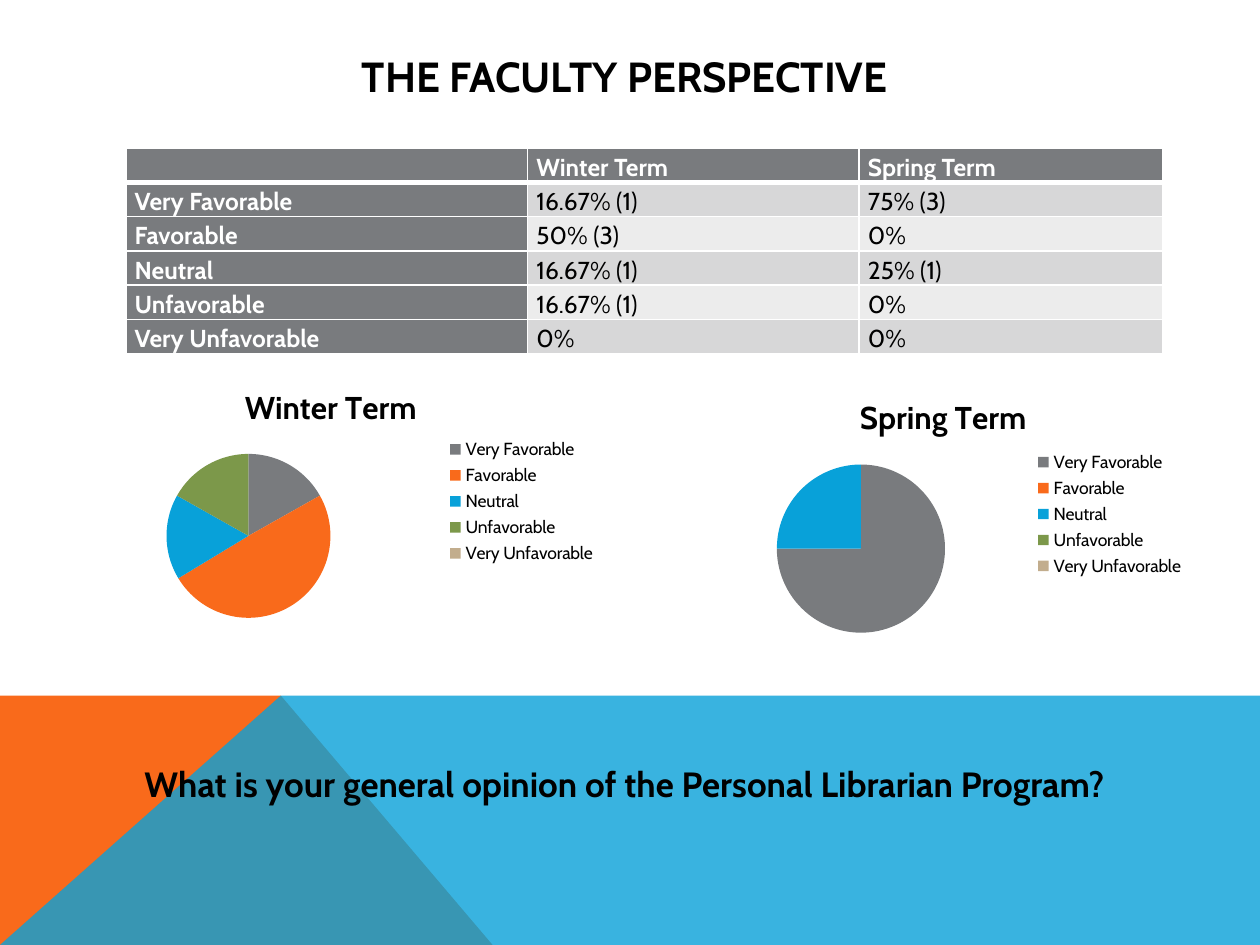
from lxml import etree
from pptx import Presentation
from pptx.chart.data import CategoryChartData
from pptx.dml.color import RGBColor
from pptx.enum import chart as ch, text as tx
from pptx.oxml.ns import qn
from pptx.util import Pt

FONT = "Cabin"
BLACK = RGBColor(0, 0, 0)
WHITE = RGBColor(255, 255, 255)
GRAY = RGBColor(0x79, 0x7B, 0x7E)
ORANGE = RGBColor(0xF9, 0x6A, 0x1B)
BLUE = RGBColor(0x08, 0xA1, 0xD9)
GREEN = RGBColor(0x7C, 0x98, 0x4A)
TAN = RGBColor(0xC2, 0xAD, 0x8D)
DARK = RGBColor(0xD7, 0xD7, 0xD8)
LIGHT = RGBColor(0xEC, 0xEC, 0xEC)


def style(font, size, color=BLACK, bold=False):
    font.name, font.size, font.bold = FONT, Pt(size), bold
    font.color.rgb = color


def edge(cell, side, width):
    """Draw a white border on one side (L, R, T or B) of a cell."""
    line = etree.SubElement(cell._tc.get_or_add_tcPr(), qn("a:ln" + side), w=str(Pt(width)))
    fill = etree.SubElement(line, qn("a:solidFill"))
    etree.SubElement(fill, qn("a:srgbClr"), val=str(WHITE))


prs = Presentation()
prs.slide_width, prs.slide_height = Pt(720), Pt(540)
slide = prs.slides.add_slide(prs.slide_layouts[5])

# Bottom band: orange triangle under a translucent blue sheet
TOP, PEAK = 397.5, 160.5
bands = [
    (ORANGE, [(0, 540), (0, TOP), (PEAK, TOP), (281.5, 540)]),
    (BLUE, [(0, 540), (PEAK, TOP), (720, TOP), (720, 540)]),
]
for color, dots in bands:
    dots = [(Pt(x), Pt(y)) for x, y in dots]
    path = slide.shapes.build_freeform(*dots[0])
    path.add_line_segments(dots[1:], close=True)
    band = path.convert_to_shape()
    band.shadow.inherit = False
    band.fill.solid()
    band.fill.fore_color.rgb = color
    band.line.fill.background()
tint = band.fill._xPr.find(".//" + qn("a:srgbClr"))
etree.SubElement(tint, qn("a:alpha"), val="80000")

# Title and question
title = slide.shapes.title
title.left, title.top, title.width, title.height = Pt(30), Pt(25), Pt(654), Pt(36)
ask = slide.shapes.add_textbox(Pt(42), Pt(432), Pt(630), Pt(31.5))
for box, words, size in [
    (title, "THE FACULTY PERSPECTIVE", 24),
    (ask, "What is your general opinion of the Personal Librarian Program?", 20),
]:
    frame = box.text_frame
    frame.text = words
    frame.word_wrap = True
    frame.auto_size = tx.MSO_AUTO_SIZE.NONE
    frame.vertical_anchor = tx.MSO_ANCHOR.MIDDLE
    para = frame.paragraphs[0]
    para.alignment = tx.PP_ALIGN.CENTER
    style(para.runs[0].font, size, bold=True)

# Survey table
rows = [
    ("", "Winter Term", "Spring Term"),
    ("Very Favorable", "16.67% (1)", "75% (3)"),
    ("Favorable", "50% (3)", "0%"),
    ("Neutral", "16.67% (1)", "25% (1)"),
    ("Unfavorable", "16.67% (1)", "0%"),
    ("Very Unfavorable", "0%", "0%"),
]
table = slide.shapes.add_table(6, 3, Pt(72), Pt(84.5), Pt(592.5), Pt(116)).table
for col, width in zip(table.columns, (229.5, 189.5, 173.5)):
    col.width = Pt(width)
for r, row in enumerate(rows):
    table.rows[r].height = Pt(19.3)
    for c, words in enumerate(row):
        cell = table.cell(r, c)
        head = r == 0 or c == 0
        cell.margin_left = cell.margin_right = Pt(5)
        cell.margin_top = cell.margin_bottom = 0
        for side in "LRTB":
            edge(cell, side, 3 if (r, side) in [(0, "B"), (1, "T")] else 1)
        cell.fill.solid()
        cell.fill.fore_color.rgb = GRAY if head else DARK if r % 2 else LIGHT
        para = cell.text_frame.paragraphs[0]
        para.text = words
        para.line_spacing = 1.15
        style(para.font, 14)
        for run in para.runs:
            style(run.font, 14, WHITE if head else BLACK, head)

# One pie for each term
names = [row[0] for row in rows[1:]]
pies = [
    ("Winter Term", (17, 50, 17, 17, 0), (30, 210, 318, 153)),
    ("Spring Term", (75, 0, 25, 0, 0), (394, 216, 290, 155.5)),
]
for term, vals, place in pies:
    data = CategoryChartData()
    data.categories = names
    data.add_series("Series 1", vals)
    pie = slide.shapes.add_chart(ch.XL_CHART_TYPE.PIE, *map(Pt, place), data).chart
    style(pie.font, 10)
    pie.has_title = True
    pie.chart_title.include_in_layout = False
    pie.chart_title.text_frame.text = term
    style(pie.chart_title.text_frame.paragraphs[0].runs[0].font, 18, bold=True)
    pie.has_legend = True
    pie.legend.position = ch.XL_LEGEND_POSITION.RIGHT
    pie.legend.include_in_layout = False
    plot = pie.plots[0]
    plot.vary_by_categories = True
    for i, color in enumerate((GRAY, ORANGE, BLUE, GREEN, TAN)):
        fill = plot.series[0].points[i].format.fill
        fill.solid()
        fill.fore_color.rgb = color

prs.save("out.pptx")
